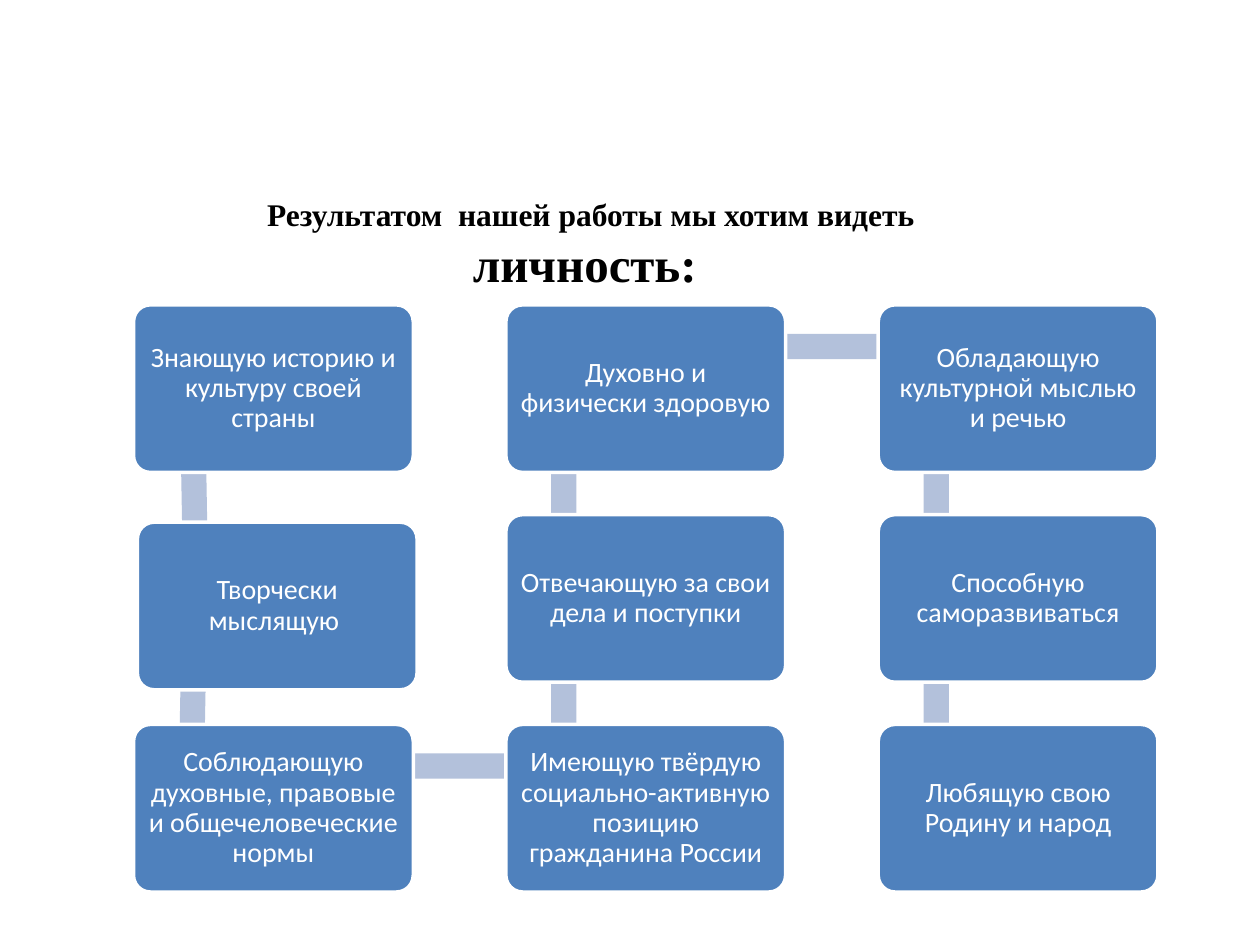
from dataclasses import dataclass
from math import atan2, degrees, hypot
from itertools import pairwise

from pptx import Presentation
from pptx.dml.color import RGBColor
from pptx.enum.shapes import MSO_SHAPE
from pptx.enum.text import MSO_ANCHOR, MSO_AUTO_SIZE, PP_ALIGN
from pptx.util import Inches, Pt

BLUE = RGBColor(0x4F, 0x81, 0xBD)
PALE = RGBColor(0xB3, 0xC1, 0xDB)
WHITE = RGBColor(0xFF, 0xFF, 0xFF)
BLACK = RGBColor(0, 0, 0)

LEFT, TOP = 1.06, 2.42
COL_STEP, ROW_STEP = 2.955, 1.665
BOX_W, BOX_H = 2.22, 1.33
ANCHOR_X, ANCHOR_Y = 0.46, 0.33
BAR_H = 0.2
INSET = 0.11


@dataclass(frozen=True)
class Trait:
    text: str
    col: int
    row: int
    dx: float = 0
    dy: float = 0

    @property
    def left(self) -> float:
        return LEFT + self.col * COL_STEP + self.dx

    @property
    def top(self) -> float:
        return TOP + self.row * ROW_STEP + self.dy


# The chain snakes down, up and down through the three columns.
TRAITS = [
    Trait("Знающую историю и культуру своей страны", 0, 0),
    Trait("Творчески мыслящую ", 0, 1, dx=0.03, dy=0.06),
    Trait("Соблюдающую духовные, правовые и общечеловеческие нормы", 0, 2),
    Trait("Имеющую твёрдую социально-активную позицию гражданина России", 1, 2),
    Trait("Отвечающую за свои дела и поступки", 1, 1),
    Trait("Духовно и физически здоровую", 1, 0),
    Trait("Обладающую культурной мыслью и речью", 2, 0),
    Trait("Способную саморазвиваться", 2, 1),
    Trait("Любящую свою Родину и народ", 2, 2),
]


def add_bar(slide, start: Trait, end: Trait) -> None:
    """Join the anchor points of two neighbouring boxes with a rotated bar."""
    dx, dy = end.left - start.left, end.top - start.top
    length = hypot(dx, dy)
    x = (start.left + end.left) / 2 + ANCHOR_X
    y = (start.top + end.top) / 2 + ANCHOR_Y
    sp = slide.shapes.add_shape(
        MSO_SHAPE.RECTANGLE, Inches(x - length / 2), Inches(y - BAR_H / 2),
        Inches(length), Inches(BAR_H))
    sp.rotation = degrees(atan2(dy, dx))
    sp.shadow.inherit = False
    sp.fill.solid()
    sp.fill.fore_color.rgb = PALE
    sp.line.fill.background()


def add_box(slide, trait: Trait) -> None:
    sp = slide.shapes.add_shape(
        MSO_SHAPE.ROUNDED_RECTANGLE, Inches(trait.left), Inches(trait.top),
        Inches(BOX_W), Inches(BOX_H))
    sp.adjustments[0] = 0.1
    sp.shadow.inherit = False
    sp.fill.solid()
    sp.fill.fore_color.rgb = BLUE
    sp.line.color.rgb = WHITE
    sp.line.width = Pt(2)
    tf = sp.text_frame
    tf.word_wrap = True
    tf.vertical_anchor = MSO_ANCHOR.MIDDLE
    # A rounded rectangle already insets its text by part of the corner.
    tf.margin_left = tf.margin_right = Inches(INSET - 0.04)
    tf.margin_top = tf.margin_bottom = Inches(INSET - 0.04)
    p = tf.paragraphs[0]
    p.text = trait.text
    p.alignment = PP_ALIGN.CENTER
    p.line_spacing = 0.9
    p.font.name = "Calibri"
    p.font.size = Pt(16)
    p.font.color.rgb = WHITE


def add_title(slide) -> None:
    tf = slide.shapes.add_textbox(
        Inches(1.41), Inches(1.5), Inches(6.56), Inches(0.88)).text_frame
    tf.word_wrap = True
    tf.auto_size = MSO_AUTO_SIZE.SHAPE_TO_FIT_TEXT
    lines = [("Результатом  нашей работы мы хотим видеть", 18), ("личность: ", 28)]
    for i, (text, size) in enumerate(lines):
        p = tf.add_paragraph() if i else tf.paragraphs[0]
        p.text = text
        p.alignment = PP_ALIGN.CENTER
        p.font.name = "Times New Roman"
        p.font.size = Pt(size)
        p.font.bold = True
        p.font.color.rgb = BLACK


def main() -> None:
    prs = Presentation()
    prs.slide_width, prs.slide_height = Inches(10), Inches(7.5)
    slide = prs.slides.add_slide(prs.slide_layouts[6])
    for start, end in pairwise(TRAITS):
        add_bar(slide, start, end)
    for trait in TRAITS:
        add_box(slide, trait)
    add_title(slide)
    prs.save("out.pptx")


if __name__ == "__main__":
    main()
